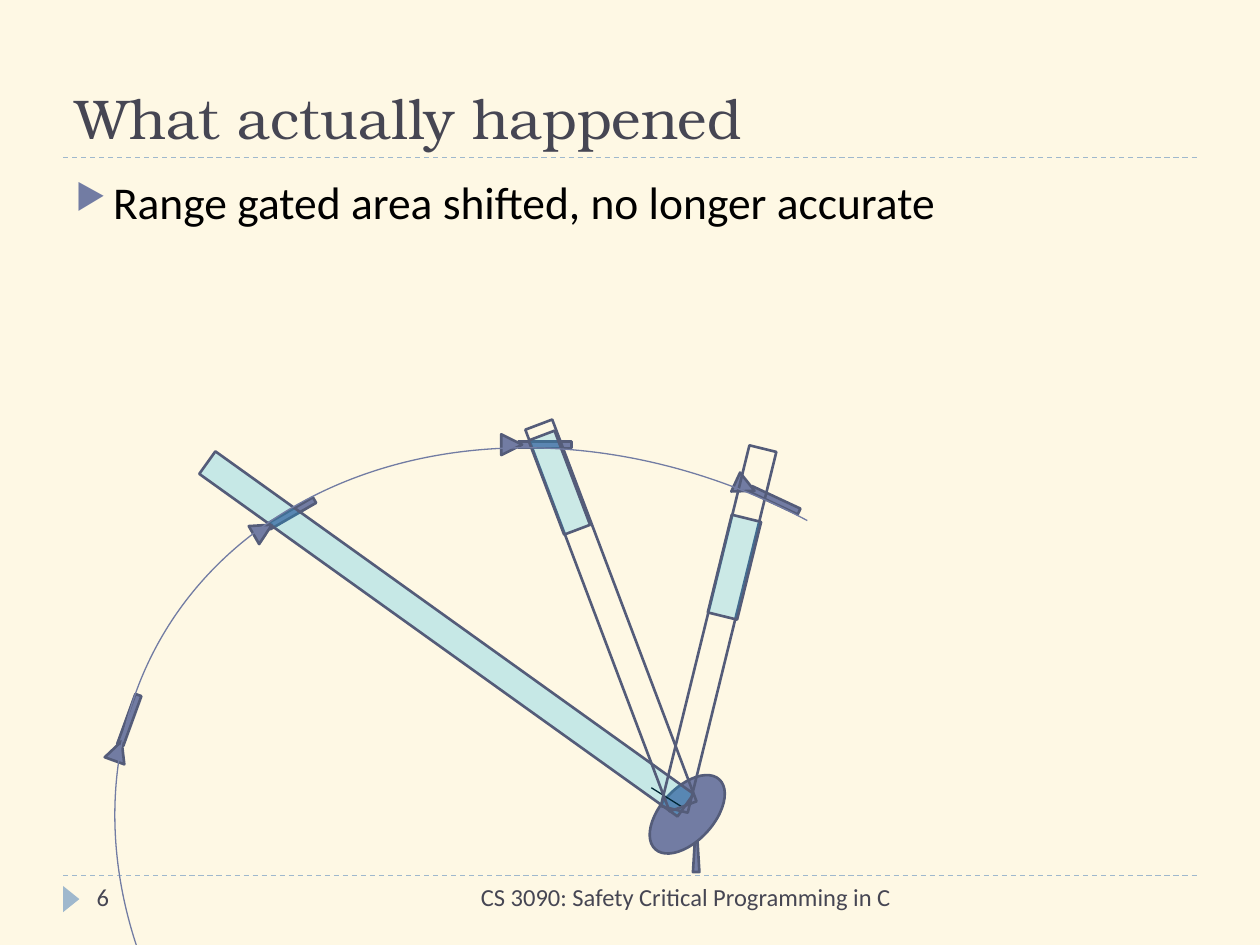
from dataclasses import dataclass

from lxml.etree import SubElement
from pptx import Presentation
from pptx.dml.color import RGBColor
from pptx.enum.dml import MSO_LINE
from pptx.enum.shapes import MSO_CONNECTOR, MSO_SHAPE as Preset
from pptx.enum.text import MSO_ANCHOR, PP_ALIGN
from pptx.oxml.ns import qn
from pptx.util import Cm, Pt


@dataclass(frozen=True)
class Theme:
    background: str = "FEF8E4"
    heading: str = "464653"
    text: str = "000000"
    rule: str = "9FB8CD"
    solid: str = "727CA3"
    outline: str = "545C79"
    beam: str = "00B0F0"
    heading_font: str = "TeX Gyre Bonum"
    body_font: str = "Calibri"
    title_size: int = 32
    body_size: int = 26
    footer_size: int = 14
    outline_width: float = 1.5
    thin_width: float = 0.75


THEME = Theme()


def rgb(color):
    return RGBColor.from_string(color)


def add_figure(shapes, preset, left, top, width, height, rotation=0,
               fill=None, opacity=None, line=THEME.outline,
               line_width=THEME.outline_width):
    shape = shapes.add_shape(preset, Cm(left), Cm(top), Cm(width), Cm(height))
    shape.shadow.inherit = False
    shape.rotation = rotation
    if fill:
        shape.fill.solid()
        shape.fill.fore_color.rgb = rgb(fill)
        if opacity:
            color = shape.fill._xPr.find(f"{qn('a:solidFill')}/{qn('a:srgbClr')}")
            SubElement(color, qn("a:alpha"), val=str(opacity * 1000))
    else:
        shape.fill.background()
    if line:
        shape.line.color.rgb = rgb(line)
        shape.line.width = Pt(line_width)
    else:
        shape.line.fill.background()
    return shape


def add_line(shapes, start, end, color, dashed=False):
    points = [Cm(value) for value in (*start, *end)]
    connector = shapes.add_connector(MSO_CONNECTOR.STRAIGHT, *points)
    connector.line.color.rgb = rgb(color)
    connector.line.width = Pt(THEME.thin_width)
    if dashed:
        connector.line.dash_style = MSO_LINE.DASH
    SubElement(connector._element.spPr, qn("a:effectLst"))


def add_text(shapes, text, left, top, width, height, size, color,
             font=THEME.body_font, anchor=MSO_ANCHOR.TOP, align=PP_ALIGN.LEFT):
    box = shapes.add_textbox(Cm(left), Cm(top), Cm(width), Cm(height))
    frame = box.text_frame
    frame.word_wrap = True
    frame.vertical_anchor = anchor
    paragraph = frame.paragraphs[0]
    paragraph.text = text
    paragraph.alignment = align
    paragraph.font.size = Pt(size)
    paragraph.font.name = font
    paragraph.font.color.rgb = rgb(color)
    return paragraph


def add_bullet(paragraph, symbol, color, percent, indent):
    paragraph.space_before = Pt(6)
    properties = paragraph._p.get_or_add_pPr()
    properties.set("marL", str(Cm(indent)))
    properties.set("indent", str(-Cm(indent)))
    bullet_color = SubElement(properties, qn("a:buClr"))
    SubElement(bullet_color, qn("a:srgbClr"), val=color)
    SubElement(properties, qn("a:buSzPct"), val=str(percent * 1000))
    SubElement(properties, qn("a:buChar"), char=symbol)
    defaults = properties.find(qn("a:defRPr"))
    if defaults is not None:
        properties.append(defaults)


def add_missile(shapes, center, top, rotation):
    missile = shapes.add_group_shape()
    add_figure(missile.shapes, Preset.RECTANGLE, center - 0.065, top,
               0.13, 1.07, fill=THEME.solid)
    add_figure(missile.shapes, Preset.ISOSCELES_TRIANGLE, center - 0.21,
               top + 0.99, 0.42, 0.42, fill=THEME.solid)
    missile.rotation = rotation


def add_radar(shapes):
    radar = shapes.add_group_shape().shapes
    add_figure(radar, Preset.ISOSCELES_TRIANGLE, 13.97, 16.51, 0.13, 1.07,
               fill=THEME.solid)
    add_figure(radar, Preset.OVAL, 12.9, 15.88, 1.91, 1.07, 312.6,
               fill=THEME.solid)
    add_line(radar, (13.77, 16.28), (13.13, 15.88), THEME.text)


def add_trajectory(shapes):
    arc = add_figure(shapes, Preset.ARC, 3.84, 7.57, 16.89, 20.73, 298.2,
                     line=THEME.solid, line_width=THEME.thin_width)
    degree = 0.6
    arc.adjustments[0] = 154.05 * degree
    arc.adjustments[1] = 0


def add_frame(shapes):
    for height in (17.65, 3.18):
        add_line(shapes, (1.27, height), (24.13, height), THEME.rule, dashed=True)
    add_figure(shapes, Preset.ISOSCELES_TRIANGLE, 1.17, 17.96, 0.53, 0.33, 90,
               fill=THEME.rule, line=None)
    add_text(shapes, "What actually happened", 1.27, 0.43, 22.86, 2.74,
             THEME.title_size, THEME.heading, THEME.heading_font,
             MSO_ANCHOR.BOTTOM)
    add_text(shapes, "CS 3090: Safety Critical Programming in C",
             8.05, 17.65, 10.16, 1.02, THEME.footer_size, THEME.heading,
             align=PP_ALIGN.RIGHT)
    add_text(shapes, "6", 1.7, 17.65, 5.51, 1.02, THEME.footer_size,
             THEME.heading)


def main():
    presentation = Presentation()
    presentation.slide_width = Cm(25.4)
    presentation.slide_height = Cm(19.05)
    slide = presentation.slides.add_slide(presentation.slide_layouts[6])
    slide.background.fill.solid()
    slide.background.fill.fore_color.rgb = rgb(THEME.background)
    shapes = slide.shapes

    add_frame(shapes)
    add_radar(shapes)
    missiles = [(2.55, 13.97, 20), (5.73, 9.73, 60),
                (10.81, 8.26, 90), (15.47, 9.31, 115)]
    for center, top, rotation in missiles:
        add_missile(shapes, center, top, rotation)

    beams = [
        (3.07, 12.5, 11.86, 0.56, 35.6, THEME.beam, 22),
        (8.2, 12.12, 8.23, 0.58, 69.3),
        (10.74, 12.4, 7.49, 0.56, 103.8),
        (13.79, 11.13, 2.03, 0.61, 103.8, THEME.beam, 20),
        (10.26, 9.45, 2.03, 0.56, 69.3, THEME.beam, 20),
    ]
    for beam in beams:
        add_figure(shapes, Preset.RECTANGLE, *beam)
    add_trajectory(shapes)

    point = add_text(shapes, "Range gated area shifted, no longer accurate",
                     1.27, 3.38, 22.86, 5.92, THEME.body_size, THEME.text)
    add_bullet(point, "▶", THEME.solid, 76, 0.76)
    presentation.save("out.pptx")


if __name__ == "__main__":
    main()
